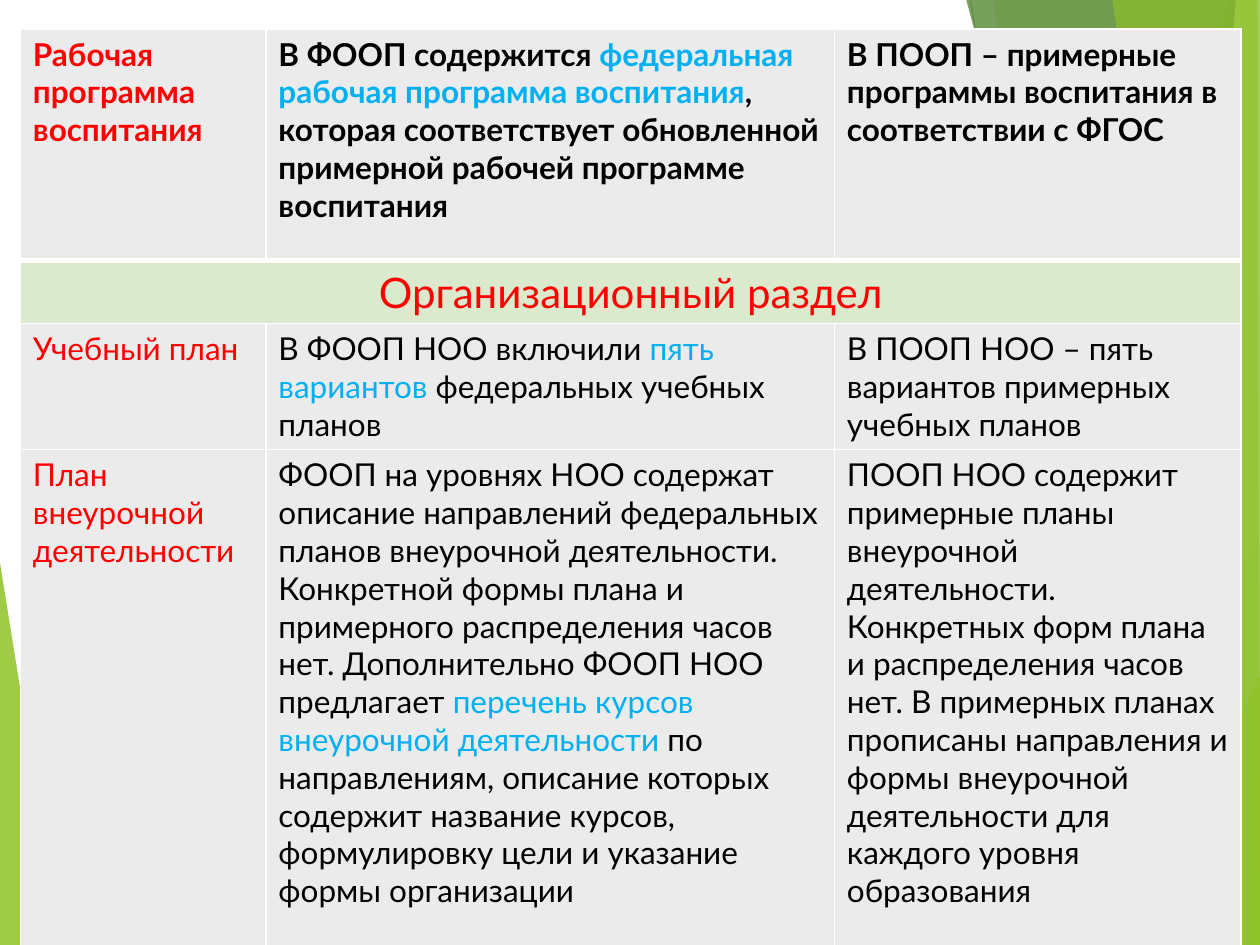
from dataclasses import dataclass

from lxml.etree import SubElement
from pptx import Presentation
from pptx.dml.color import RGBColor as RGB
from pptx.enum.shapes import MSO_CONNECTOR as CONN
from pptx.enum.text import MSO_ANCHOR as ANCHOR, PP_ALIGN as ALIGN
from pptx.oxml.ns import qn
from pptx.util import Cm, Pt


@dataclass(frozen=True)
class Theme:
    font: str = "Lato"
    body: int = 18
    section: int = 24
    label: str = "FF0000"
    text: str = "000000"
    accent: str = "00B0F0"
    cell: str = "EBEBEB"
    band: str = "DBE9CD"
    border: str = "FFFFFF"
    lime: str = "90C226"
    green: str = "54A021"
    forest: str = "3F7819"
    pale: str = "C0E474"
    line_a: str = "D9D9D9"
    line_b: str = "BFBFBF"


T = Theme()
W, H = 25.4, 19.05
R = W + 0.03

LEFT_FACET = ([(-0.03, 11.15), (1.24, 19.08), (-0.03, H)], T.lime, 85)
RIGHT_FACETS = [
    ([(24.77, 0), (19.15, H), (R, H), (R, 0)], T.lime, 30),
    ([(20.02, 0), (23.34, H), (R, H), (R, 0)], T.lime, 20),
    ([(18.44, H), (R, 10.9), (R, H)], T.green, 72),
    ([(19.48, 0), (24.64, H), (R, H), (R, 0)], T.forest, 70),
    ([(24.92, 0), (23.04, H), (R, H), (R, 0)], T.pale, 70),
    ([(22.43, 0), (25.04, H), (W, H), (25.35, 0)], T.lime, 65),
    ([(22.38, H), (R, 13.59), (R, H)], T.lime, 80),
]
LINES = [
    ((14.25, H), (R, 11.61), T.line_a),
    ((19.56, 0), (22.96, H), T.line_b),
]

COLS = [4.95, 11.46, 8.2]
ROWS = [4.67, 1.24, 2.49, 10.08]
SECTION = 1
CONTENT = [
    ["Рабочая программа воспитания",
     "В ФООП содержится |федеральная рабочая программа воспитания|, которая "
     "соответствует обновленной примерной рабочей программе воспитания",
     "В ПООП – примерные программы воспитания в соответствии с ФГОС"],
    ["Организационный раздел", "", ""],
    ["Учебный план",
     "В ФООП НОО включили |пять вариантов| федеральных учебных планов",
     "В ПООП НОО – пять вариантов примерных учебных планов"],
    ["План внеурочной деятельности",
     "ФООП на уровнях НОО содержат описание направлений федеральных планов "
     "внеурочной деятельности. Конкретной формы плана и примерного "
     "распределения часов нет. Дополнительно ФООП НОО предлагает "
     "|перечень курсов внеурочной деятельности |по направлениям, описание "
     "которых содержит название курсов, формулировку цели и указание формы "
     "организации",
     "ПООП НОО содержит примерные планы внеурочной деятельности. Конкретных "
     "форм плана и распределения часов нет. В примерных планах прописаны "
     "направления и формы внеурочной деятельности для каждого уровня "
     "образования"],
]


def rgb(code):
    return RGB.from_string(code)


def add_facet(s, points, color, alpha):
    start, *rest = [(Cm(x), Cm(y)) for x, y in points]
    builder = s.shapes.build_freeform(*start)
    builder.add_line_segments(rest, close=True)
    sp = builder.convert_to_shape()
    sp.shadow.inherit = False
    sp.fill.solid()
    sp.fill.fore_color.rgb = rgb(color)
    sp.line.fill.background()
    clr = sp.fill._xPr.find(".//" + qn("a:srgbClr"))
    SubElement(clr, qn("a:alpha")).set("val", str(alpha * 1000))


def add_line(s, start, end, color):
    ends = [Cm(v) for v in (*start, *end)]
    line = s.shapes.add_connector(CONN.STRAIGHT, *ends)
    line.line.color.rgb = rgb(color)
    line.line.width = Pt(0.75)
    SubElement(line._element.spPr, qn("a:effectLst"))


def set_borders(cell, top, bottom):
    tc_pr = cell._tc.get_or_add_tcPr()
    widths = {"lnL": 1, "lnR": 1, "lnT": top, "lnB": bottom}
    for i, (side, width) in enumerate(widths.items()):
        ln = SubElement(tc_pr, qn(f"a:{side}"), w=str(Pt(width)))
        fill = SubElement(ln, qn("a:solidFill"))
        SubElement(fill, qn("a:srgbClr"), val=T.border)
        tc_pr.insert(i, ln)


def write_text(cell, text, color, size, bold, align):
    cell.vertical_anchor = ANCHOR.TOP
    p = cell.text_frame.paragraphs[0]
    p.alignment = align
    for i, part in enumerate(text.split("|")):
        r = p.add_run()
        r.text = part
        formats = {"name": T.font, "size": Pt(size), "bold": bold}
        for name, value in formats.items():
            setattr(r.font, name, value)
        r.font.color.rgb = rgb(T.accent if i % 2 else color)


def add_comparison(s):
    frame = s.shapes.add_table(len(ROWS), len(COLS), Cm(0.41), Cm(0.58),
                               Cm(sum(COLS)), Cm(sum(ROWS)))
    table = frame.table
    table.first_row = table.horz_banding = False
    for col, width in zip(table.columns, COLS):
        col.width = Cm(width)
    for row, height in zip(table.rows, ROWS):
        row.height = Cm(height)
    for i, texts in enumerate(CONTENT):
        section = i == SECTION
        for j, text in enumerate(texts):
            cell = table.cell(i, j)
            cell.fill.solid()
            cell.fill.fore_color.rgb = rgb(T.band if section else T.cell)
            set_borders(cell, 3 if section else 1, 3 if i == 0 else 1)
            if text:
                write_text(cell, text, T.text if j else T.label,
                           T.section if section else T.body, i == 0,
                           ALIGN.CENTER if section else ALIGN.LEFT)
    table.cell(SECTION, 0).merge(table.cell(SECTION, len(COLS) - 1))


def main():
    prs = Presentation()
    prs.slide_width, prs.slide_height = Cm(W), Cm(H)
    s = prs.slides.add_slide(prs.slide_layouts[6])
    add_facet(s, *LEFT_FACET)
    for line in LINES:
        add_line(s, *line)
    for facet in RIGHT_FACETS:
        add_facet(s, *facet)
    add_comparison(s)
    prs.save("out.pptx")


if __name__ == "__main__":
    main()
